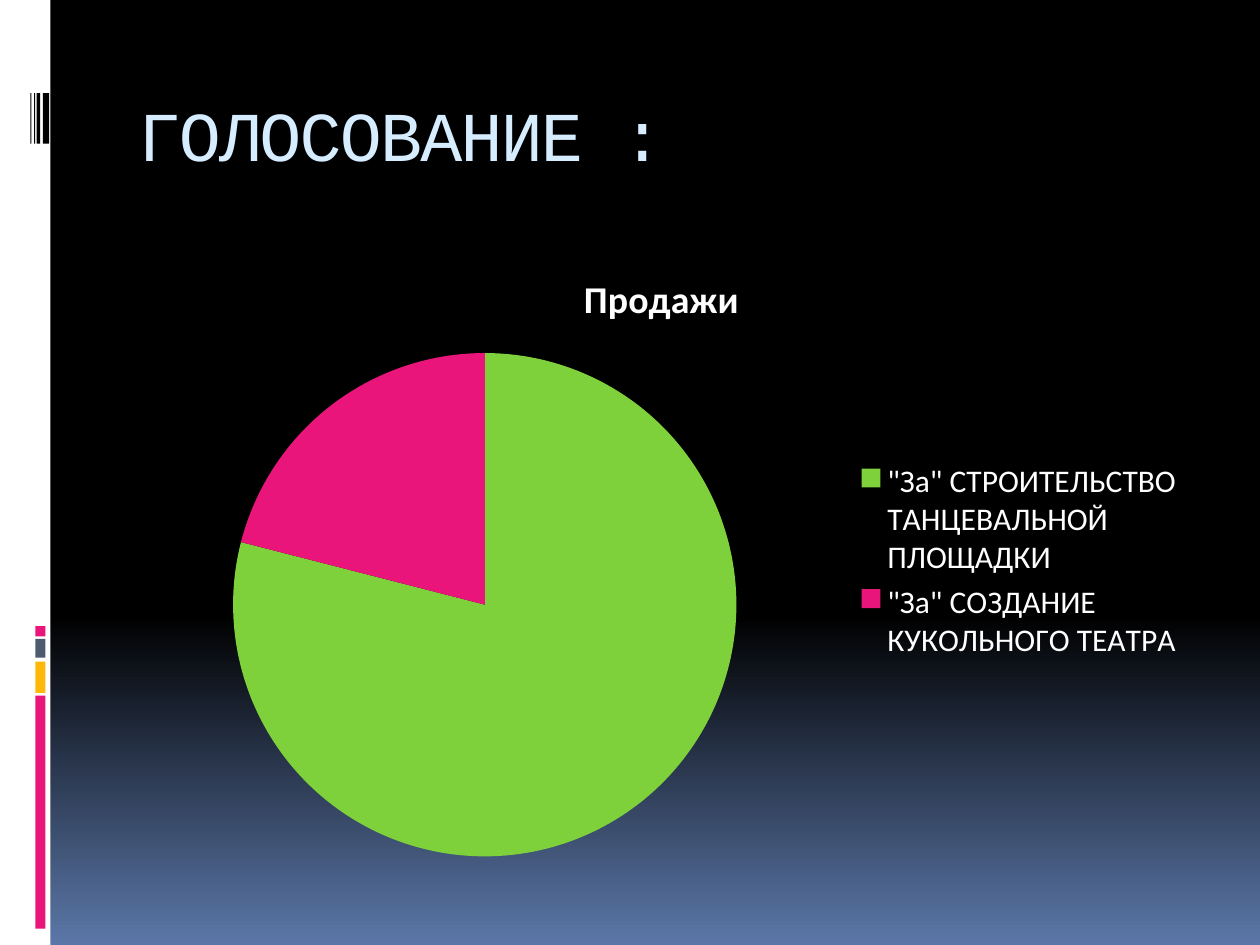
import pptx
import pptx.chart.data
import pptx.dml.color
import pptx.enum.chart
import pptx.enum.shapes
import pptx.enum.text
import pptx.oxml
import pptx.oxml.ns
import pptx.util
from pptx.util import Inches

COLORS = {
    "black": "000000",
    "white": "FFFFFF",
    "sky": "5B77A8",
    "title": "D6ECFF",
    "green": "7FD13B",
    "pink": "EA157A",
    "amber": "FEB80A",
    "slate": "4E5B6F",
}


def rgb(name):
    return pptx.dml.color.RGBColor.from_string(COLORS[name])


def style_font(font, name, size, color, bold=False):
    font.name = name
    font.size = pptx.util.Pt(size)
    font.bold = bold
    font.color.rgb = rgb(color)


def paint_background(slide):
    fill = slide.background.fill
    fill.gradient()
    fill.gradient_angle = 270
    for stop, (position, color) in zip(fill.gradient_stops, [(0.65, "black"), (1, "sky")]):
        stop.position = position
        stop.color.rgb = rgb(color)


def add_bar(slide, left, top, width, height, color):
    shape = slide.shapes.add_shape(
        pptx.enum.shapes.MSO_SHAPE.RECTANGLE,
        Inches(left), Inches(top), Inches(width), Inches(height))
    shape.shadow.inherit = False
    shape.fill.solid()
    shape.fill.fore_color.rgb = rgb(color)
    shape.line.fill.background()


def add_side_band(slide, left, top, width, height):
    add_bar(slide, left, top, width, height, "white")
    # Stacked colour blocks
    for offset, length, color in [(5.52, 1.85, "pink"), (5.25, 0.25, "amber"),
                                  (5.07, 0.15, "slate"), (4.97, 0.08, "pink")]:
        add_bar(slide, left + 0.28, top + offset, 0.08, length, color)
    # Barcode stripes
    for offset, thickness in [(0.34, 0.05), (0.29, 0.03), (0.27, 0.01), (0.24, 0.01)]:
        add_bar(slide, left + offset, top + 0.74, thickness, 0.4, "black")


def place_title(slide, left, top, width, height):
    title = slide.shapes.title
    title.left, title.top = Inches(left), Inches(top)
    title.width, title.height = Inches(width), Inches(height)
    frame = title.text_frame
    frame.text = "ГОЛОСОВАНИЕ :"
    frame.vertical_anchor = pptx.enum.text.MSO_ANCHOR.MIDDLE
    paragraph = frame.paragraphs[0]
    paragraph.alignment = pptx.enum.text.PP_ALIGN.LEFT
    run = paragraph.runs[0]
    style_font(run.font, "Courier New", 40, "title")
    run._r.get_or_add_rPr().set("spc", "-100")


def set_plot_layout(chart, x, y, width, height):
    """Fix the plot area, in fractions of the chart."""
    plot_area = chart._chartSpace.chart.plotArea
    for old in plot_area.findall(pptx.oxml.ns.qn("c:layout")):
        plot_area.remove(old)
    values = "".join(f'<c:{tag} val="{value}"/>' for tag, value in [
        ("layoutTarget", "inner"), ("xMode", "edge"), ("yMode", "edge"),
        ("x", x), ("y", y), ("w", width), ("h", height)])
    plot_area.insert(0, pptx.oxml.parse_xml(
        f'<c:layout {pptx.oxml.ns.nsdecls("c")}>'
        f'<c:manualLayout>{values}</c:manualLayout></c:layout>'))


def add_vote_chart(slide, left, top, width, height):
    data = pptx.chart.data.CategoryChartData()
    data.categories = ['"За" СТРОИТЕЛЬСТВО ТАНЦЕВАЛЬНОЙ ПЛОЩАДКИ',
                       '"За" СОЗДАНИЕ КУКОЛЬНОГО ТЕАТРА']
    data.add_series("Продажи", (79, 21))
    chart = slide.shapes.add_chart(
        pptx.enum.chart.XL_CHART_TYPE.PIE,
        Inches(left), Inches(top), Inches(width), Inches(height), data).chart
    style_font(chart.font, "Calibri", 18, "white")

    # Chart title and legend
    chart.has_title = True
    title_frame = chart.chart_title.text_frame
    title_frame.text = "Продажи"
    style_font(title_frame.paragraphs[0].runs[0].font, "Calibri", 21.6, "white", bold=True)
    chart.chart_title.include_in_layout = False
    chart.has_legend = True
    chart.legend.position = pptx.enum.chart.XL_LEGEND_POSITION.RIGHT
    chart.legend.include_in_layout = False

    # Slices
    plot = chart.plots[0]
    plot.vary_by_categories = True
    for index, color in enumerate(["green", "pink"]):
        point_format = plot.series[0].points[index].format
        point_format.fill.solid()
        point_format.fill.fore_color.rgb = rgb(color)
        point_format.line.fill.background()
    set_plot_layout(chart, 0.1, 0.17, 0.47, 0.8)


def main():
    presentation = pptx.Presentation()
    presentation.slide_width = Inches(10)
    presentation.slide_height = Inches(7.5)
    slide = presentation.slides.add_slide(presentation.slide_layouts.get_by_name("Title Only"))
    paint_background(slide)
    add_side_band(slide, 0, 0, 0.4, 7.5)
    place_title(slide, 1, 0.56, 8.5, 1)
    add_vote_chart(slide, 1, 1.95, 8.5, 5)
    presentation.save("out.pptx")


if __name__ == "__main__":
    main()
